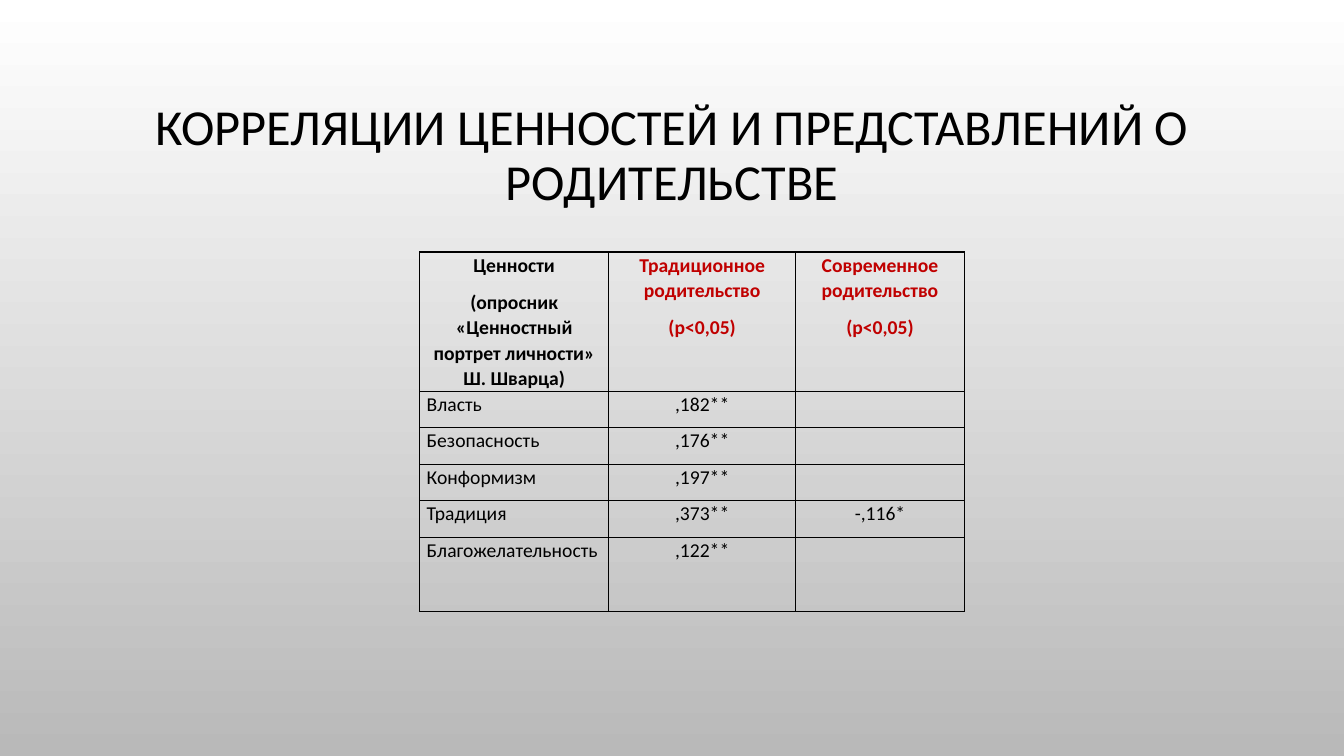
"""Builds a slide with a table of correlations between values and views of parenthood."""
from lxml import etree
from pptx import Presentation
from pptx.dml.color import RGBColor
from pptx.enum.text import MSO_ANCHOR, PP_ALIGN
from pptx.oxml.ns import qn
from pptx.util import Pt

CENTER, LEFT = PP_ALIGN.CENTER, PP_ALIGN.LEFT
MIDDLE = MSO_ANCHOR.MIDDLE
TITLE_ONLY = 5
FONT = "Calibri"
COLORS = {"text": "000000", "accent": "C00000", "border": "000000",
          "top": "FFFFFF", "bottom": "B9B9B9"}

TITLE = "КОРРЕЛЯЦИИ ЦЕННОСТЕЙ И ПРЕДСТАВЛЕНИЙ О РОДИТЕЛЬСТВЕ"
ROWS = [
    ("Ценности\n(опросник «Ценностный портрет личности» Ш. Шварца)",
     "Традиционное родительство\n(р<0,05)",
     "Современное родительство\n(р<0,05)"),
    ("Власть", ",182**", ""),
    ("Безопасность", ",176**", ""),
    ("Конформизм", ",197**", ""),
    ("Традиция", ",373**", "-,116*"),
    ("Благожелательность", ",122**", ""),
]
COLUMN_WIDTHS = [135, 133.6, 120.5]
ROW_HEIGHTS = [99.4, 26.1, 26.1, 26.1, 26.1, 53.3]


def set_background(slide):
    """Fill the slide with a vertical gradient."""
    fill = slide.background.fill
    fill.gradient()
    fill.gradient_angle = 270
    for stop, name, position in zip(fill.gradient_stops, ("top", "bottom"), (0, 1)):
        stop.color.rgb = RGBColor.from_string(COLORS[name])
        stop.position = position


def format_paragraph(paragraph, size, color, alignment, spacing, bold=False):
    """Set the alignment, line spacing and font of a paragraph."""
    paragraph.alignment = alignment
    paragraph.line_spacing = spacing
    for run in paragraph.runs:
        run.font.name = FONT
        run.font.size = Pt(size)
        run.font.bold = bold
        run.font.color.rgb = RGBColor.from_string(COLORS[color])


def add_title(slide, left, top, width, height):
    """Place and format the title placeholder."""
    title = slide.shapes.title
    title.left, title.top, title.width, title.height = map(Pt, (left, top, width, height))
    title.text_frame.text = TITLE
    title.text_frame.word_wrap = True
    title.text_frame.vertical_anchor = MIDDLE
    format_paragraph(title.text_frame.paragraphs[0], 36, "text", CENTER, 0.9)


def set_borders(cell, width):
    """Draw a solid line on all four sides of a cell."""
    properties = cell._tc.get_or_add_tcPr()
    for position, side in enumerate(("a:lnL", "a:lnR", "a:lnT", "a:lnB")):
        line = etree.Element(qn(side), w=str(Pt(width)))
        fill = etree.SubElement(line, qn("a:solidFill"))
        etree.SubElement(fill, qn("a:srgbClr"), val=COLORS["border"])
        properties.insert(position, line)


def fill_cell(cell, text, is_header, is_label):
    """Write and format one table cell."""
    cell.margin_left = cell.margin_right = Pt(5)
    cell.margin_top = cell.margin_bottom = 0
    cell.fill.background()
    set_borders(cell, 1)
    if not text:
        return
    cell.text_frame.text = text
    color = "accent" if is_header and not is_label else "text"
    alignment = LEFT if is_label and not is_header else CENTER
    for paragraph in cell.text_frame.paragraphs:
        format_paragraph(paragraph, 14, color, alignment, 1.07, is_header)
        paragraph.space_after = Pt(8)


def add_correlation_table(slide, left, top):
    """Add the correlation table with its top left corner at the given point."""
    frame = slide.shapes.add_table(
        len(ROWS), len(COLUMN_WIDTHS), Pt(left), Pt(top),
        Pt(sum(COLUMN_WIDTHS)), Pt(sum(ROW_HEIGHTS)))
    table = frame.table
    table.first_row = table.horz_banding = False
    for column, width in zip(table.columns, COLUMN_WIDTHS):
        column.width = Pt(width)
    for row, height in zip(table.rows, ROW_HEIGHTS):
        row.height = Pt(height)
    for row_index, texts in enumerate(ROWS):
        for column_index, text in enumerate(texts):
            fill_cell(table.cell(row_index, column_index), text,
                      row_index == 0, column_index == 0)


def main():
    """Build and save the presentation."""
    presentation = Presentation()
    presentation.slide_width, presentation.slide_height = Pt(960), Pt(540)
    slide = presentation.slides.add_slide(presentation.slide_layouts[TITLE_ONLY])
    set_background(slide)
    add_title(slide, 72, 49, 816, 126)
    add_correlation_table(slide, 299.8, 180)
    presentation.save("out.pptx")


if __name__ == "__main__":
    main()
